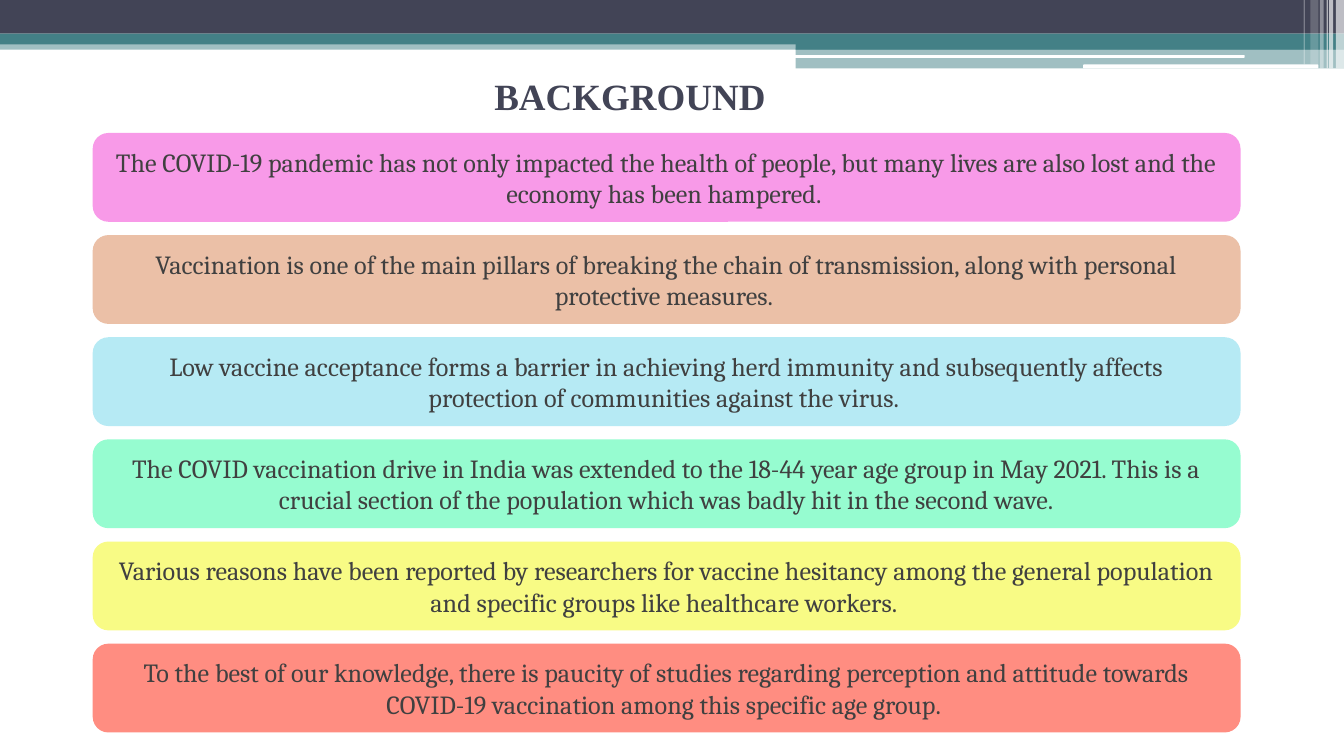
from lxml import etree
from pptx import Presentation
from pptx.dml.color import RGBColor
from pptx.enum.shapes import MSO_SHAPE
from pptx.enum.text import MSO_ANCHOR, PP_ALIGN
from pptx.oxml.ns import qn
from pptx.util import Inches, Pt

RECTANGLE = MSO_SHAPE.RECTANGLE
ROUNDED = MSO_SHAPE.ROUNDED_RECTANGLE
MIDDLE = MSO_ANCHOR.MIDDLE
CENTER = PP_ALIGN.CENTER

WHITE = RGBColor(0xFF, 0xFF, 0xFF)
NAVY = RGBColor(0x42, 0x44, 0x56)
TEAL = RGBColor(0x43, 0x80, 0x86)
TEXT_GRAY = RGBColor(0x40, 0x40, 0x40)
PINK = RGBColor(0xF8, 0x9A, 0xE8)
TAN = RGBColor(0xEB, 0xC0, 0xA7)
SKY = RGBColor(0xB6, 0xEA, 0xF4)
MINT = RGBColor(0x96, 0xFC, 0xD0)
YELLOW = RGBColor(0xF8, 0xFB, 0x85)
CORAL = RGBColor(0xFF, 0x8D, 0x81)

# Widescreen 16:9 slide
presentation = Presentation()
presentation.slide_width = Inches(10)
presentation.slide_height = Inches(10 * 9 / 16)
slide = presentation.slides.add_slide(presentation.slide_layouts[5])


def add_block(kind, left, top, width, height, color, opacity=100):
    shape = slide.shapes.add_shape(
        kind, Inches(left), Inches(top), Inches(width), Inches(height))
    shape.shadow.inherit = False
    shape.fill.solid()
    shape.fill.fore_color.rgb = color
    shape.line.fill.background()
    if opacity < 100:
        color_element = shape.fill._xPr.find(qn("a:solidFill"))[0]
        alpha = etree.SubElement(color_element, qn("a:alpha"))
        alpha.set("val", str(opacity * 1000))
    return shape


# Header bands
for left, top, width, height, color, opacity in [
    (0, 0.3, 10, 0.07, TEAL, 50),
    (0, 0, 10, 0.25, NAVY, 100),
    (0, 0.25, 10, 0.08, TEAL, 100),
    (5.92, 0.3, 4.08, 0.07, TEAL, 100),
    (5.92, 0.36, 4.08, 0.15, TEAL, 50),
]:
    add_block(RECTANGLE, left, top, width, height, color, opacity)

# White slits in the right band
for left, top, width, height in [(5.91, 0.41, 3.35, 0.02), (8.06, 0.48, 1.75, 0.03)]:
    add_block(ROUNDED, left, top, width, height, WHITE)

# Translucent stripes at the right edge
for left, width, height, opacity in [
    (9.94, 0.06, 0.51, 65),
    (9.89, 0.03, 0.51, 65),
    (9.87, 0.01, 0.51, 60),
    (9.82, 0.03, 0.51, 40),
    (9.75, 0.06, 0.48, 20),
    (9.7, 0.01, 0.48, 30),
]:
    add_block(RECTANGLE, left, 0, width, height, WHITE, opacity)

# Title, brought in front of the header
title = slide.shapes.title
slide.shapes._spTree.append(title._element)
title.left, title.top = Inches(0.23), Inches(0.51)
title.width, title.height = Inches(9), Inches(0.35)
title.text_frame.vertical_anchor = MIDDLE
paragraph = title.text_frame.paragraphs[0]
paragraph.alignment = CENTER
for text, size, bold in [("BACKGROUND", 19.8, True), (" ", 25.2, False)]:
    run = paragraph.add_run()
    run.text = text
    run.font.name = "Times New Roman"
    run.font.size = Pt(size)
    run.font.bold = bold
    run.font.color.rgb = NAVY

# Statement cards, evenly spaced down the slide
CARD_TOP = 1
CARD_PITCH = 0.76
statements = [
    (PINK, "The COVID-19 pandemic has not only impacted the health of people, "
           "but many lives are also lost and the economy has been hampered. "),
    (TAN, "Vaccination is one of the main pillars of breaking the chain of "
          "transmission, along with personal protective measures. "),
    (SKY, "Low vaccine acceptance forms a barrier in achieving herd immunity and "
          "subsequently affects protection of communities against the virus. "),
    (MINT, "The COVID vaccination drive in India was extended to the 18-44 year age "
           "group in May 2021. This is a crucial section of the population which "
           "was badly hit in the second wave."),
    (YELLOW, "Various reasons have been reported by researchers for vaccine hesitancy "
             "among the general population and specific groups like healthcare workers. "),
    (CORAL, "To the best of our knowledge, there is paucity of studies regarding "
            "perception and attitude towards COVID-19 vaccination among this "
            "specific age group. "),
]
for index, (color, text) in enumerate(statements):
    card = add_block(ROUNDED, 0.7, CARD_TOP + index * CARD_PITCH, 8.52, 0.64, color)
    card.line.color.rgb = color
    card.line.width = Pt(1.5)
    card.text_frame.word_wrap = True
    card.text_frame.vertical_anchor = MIDDLE
    paragraph = card.text_frame.paragraphs[0]
    paragraph.alignment = CENTER
    run = paragraph.add_run()
    run.text = text
    run.font.name = "Cambria"
    run.font.size = Pt(14)
    run.font.color.rgb = TEXT_GRAY

presentation.save("out.pptx")
